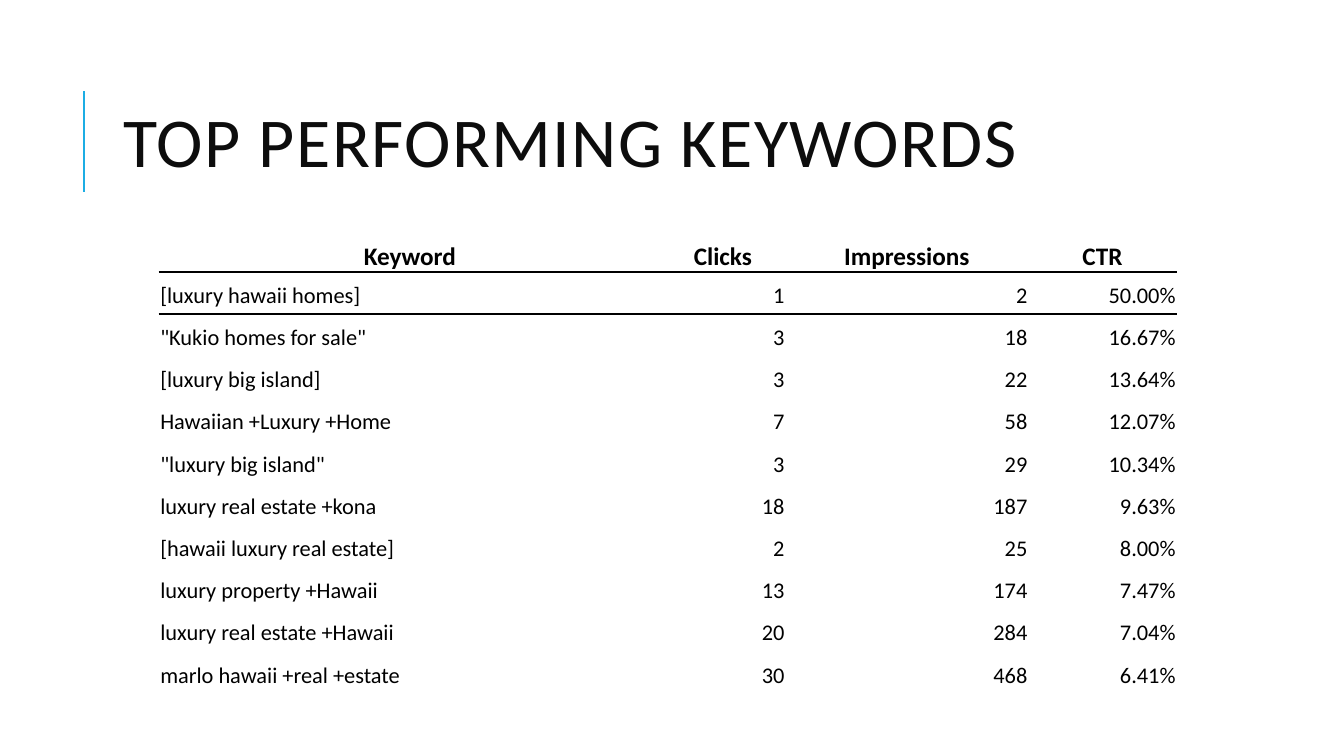
from lxml import etree
from pptx import Presentation
from pptx.dml.color import RGBColor
from pptx.enum import shapes, text
from pptx.oxml import ns
from pptx.util import Inches, Pt

ACCENT = RGBColor(0x1C, 0xAD, 0xE4)
TITLE_INK = RGBColor(0x0D, 0x0D, 0x0D)
BLACK = RGBColor(0x00, 0x00, 0x00)
FONT = "Calibri"

HEADINGS = ("Keyword", "Clicks", "Impressions", "CTR")
KEYWORDS = (
    ("[luxury hawaii homes]", "1", "2", "50.00%"),
    ('"Kukio homes for sale"', "3", "18", "16.67%"),
    ("[luxury big island]", "3", "22", "13.64%"),
    ("Hawaiian +Luxury +Home", "7", "58", "12.07%"),
    ('"luxury big island"', "3", "29", "10.34%"),
    ("luxury real estate +kona", "18", "187", "9.63%"),
    ("[hawaii luxury real estate]", "2", "25", "8.00%"),
    ("luxury property +Hawaii", "13", "174", "7.47%"),
    ("luxury real estate +Hawaii", "20", "284", "7.04%"),
    ("marlo hawaii +real +estate", "30", "468", "6.41%"),
)
COLUMN_WIDTHS = (4.97, 1.24, 2.41, 1.47)
TABLE_HEIGHT = 4.61


def apply(target, formats):
    for name, value in formats.items():
        setattr(target, name, value)


def style_font(font, size, color, bold=False):
    apply(font, {"name": FONT, "size": Pt(size), "bold": bold})
    font.color.rgb = color


def add_title(slide, wording):
    title = slide.shapes.title
    apply(title, {"left": Inches(1.12), "top": Inches(0.64),
                  "width": Inches(10.63), "height": Inches(1.64)})
    apply(title.text_frame, {"text": wording, "word_wrap": True,
                             "vertical_anchor": text.MSO_ANCHOR.MIDDLE})
    heading = title.text_frame.paragraphs[0]
    apply(heading, {"alignment": text.PP_ALIGN.LEFT, "line_spacing": 0.8})
    style_font(heading.runs[0].font, 50, TITLE_INK)
    # Letter spacing, in hundredths of a point
    heading.runs[0].font._element.set("spc", "100")


def add_accent_rule(slide):
    rule = slide.shapes.add_connector(
        shapes.MSO_CONNECTOR.STRAIGHT,
        Inches(0.83), Inches(1.9), Inches(0.83), Inches(0.9))
    rule.line.color.rgb = ACCENT
    rule.line.width = Pt(1.5)
    etree.SubElement(rule._element.spPr, ns.qn("a:effectLst"))


def add_border(cell, side):
    border = etree.SubElement(cell._tc.get_or_add_tcPr(), ns.qn(f"a:{side}"),
                              w=str(Pt(1.5)))
    fill = etree.SubElement(border, ns.qn("a:solidFill"))
    etree.SubElement(fill, ns.qn("a:srgbClr"), val=str(BLACK))


def fill_cell(cell, wording, alignment, is_heading):
    apply(cell, {"text": wording, "vertical_anchor": text.MSO_ANCHOR.BOTTOM,
                 "margin_left": Inches(0.01), "margin_right": Inches(0.01),
                 "margin_top": Inches(0.01),
                 "margin_bottom": Inches(0 if is_heading else 0.05)})
    entry = cell.text_frame.paragraphs[0]
    entry.alignment = alignment
    style_font(entry.runs[0].font, 18 if is_heading else 16, BLACK, is_heading)


def add_keyword_table(slide):
    rows = (HEADINGS,) + KEYWORDS
    table = slide.shapes.add_table(
        len(rows), len(HEADINGS), Inches(1.58), Inches(2.28),
        Inches(sum(COLUMN_WIDTHS)), Inches(TABLE_HEIGHT)).table
    apply(table, {"first_row": False, "horz_banding": False})
    for column, width in zip(table.columns, COLUMN_WIDTHS):
        column.width = Inches(width)

    for row_index, row in enumerate(rows):
        table.rows[row_index].height = Inches(TABLE_HEIGHT / len(rows))
        for column_index, wording in enumerate(row):
            cell = table.cell(row_index, column_index)
            # Headings are centred, keywords left, figures right
            if row_index == 0:
                alignment = text.PP_ALIGN.CENTER
            elif column_index == 0:
                alignment = text.PP_ALIGN.LEFT
            else:
                alignment = text.PP_ALIGN.RIGHT
            fill_cell(cell, wording, alignment, row_index == 0)
            # One rule divides the headings from the figures
            if row_index < 2:
                add_border(cell, ("lnB", "lnT")[row_index])
            cell.fill.background()


def main():
    deck = Presentation()
    apply(deck, {"slide_width": Inches(13.33), "slide_height": Inches(7.5)})
    slide = deck.slides.add_slide(deck.slide_layouts[5])
    add_accent_rule(slide)
    add_title(slide, "TOP PERFORMING KEYWORDS")
    add_keyword_table(slide)
    deck.save("out.pptx")


if __name__ == "__main__":
    main()
